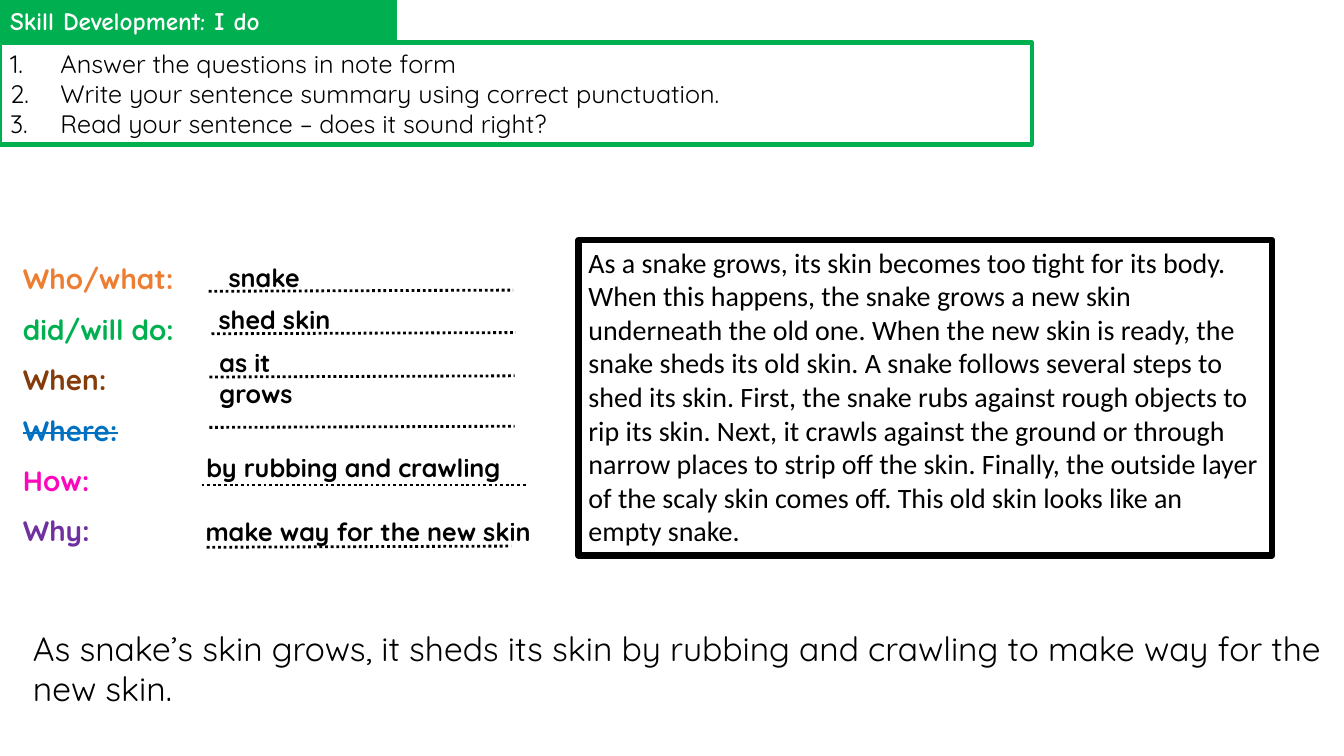
from lxml import etree
from pptx import Presentation
from pptx import util as u
from pptx.dml.color import RGBColor
from pptx.enum import dml, shapes, text
from pptx.oxml.ns import qn

BLACK = RGBColor(0x00, 0x00, 0x00)
WHITE = RGBColor(0xFF, 0xFF, 0xFF)
GREEN = RGBColor(0x00, 0xB0, 0x50)
ORANGE = RGBColor(0xED, 0x7D, 0x31)
BROWN = RGBColor(0x84, 0x3C, 0x0B)
BLUE = RGBColor(0x00, 0x70, 0xC0)
PINK = RGBColor(0xFC, 0x08, 0xBC)
PURPLE = RGBColor(0x70, 0x30, 0xA0)
FONT = "Quicksand"

STEPS = [
    "Answer the questions in note form",
    "Write your sentence summary using correct punctuation.",
    "Read your sentence – does it sound right?",
]
LABELS = [
    ("Who/what:", ORANGE, False),
    ("did/will do:", GREEN, False),
    ("When:", BROWN, False),
    ("Where:", BLUE, True),
    ("How:", PINK, False),
    ("Why:", PURPLE, False),
]
# Text, its left, top and width; rule left, top, width and rise
ANSWERS = [
    ("snake", 0.58, 0.43, 2.39, 0.33, 1.29, 7.67, 0.03),
    ("shed skin", 0.33, 1.49, 3.38, 0.4, 2.36, 7.67, 0.03),
    ("as it grows", 0.35, 2.59, 3.76, 0.35, 3.45, 7.69, 0.03),
    ("", 0, 0, 0, 0.35, 4.72, 7.69, 0.03),
    ("by rubbing and crawling", 0.02, 5.23, 8.13, 0.15, 6.17, 8.18, 0),
    ("make way for the new skin", 0, 6.83, 8.79, 0.28, 7.74, 7.67, 0.03),
]
STORY = (
    "As a snake grows, its skin becomes too tight for its body. When this "
    "happens, the snake grows a new skin underneath the old one. When the new "
    "skin is ready, the snake sheds its old skin. A snake follows several steps "
    "to shed its skin. First, the snake rubs against rough objects to rip its "
    "skin. Next, it crawls against the ground or through narrow places to strip "
    "off the skin. Finally, the outside layer of the scaly skin comes off. This "
    "old skin looks like an empty snake."
)
SUMMARY = (
    "As snake’s skin grows, it sheds its skin by rubbing and crawling "
    "to make way for the new skin."
)


def place(shape, box):
    shape.left, shape.top, shape.width, shape.height = map(u.Cm, box)


def write(para, words, size, color=BLACK, bold=False, font=FONT):
    para.alignment = text.PP_ALIGN.LEFT
    run = para.add_run()
    run.text = words
    run.font.name = font
    run.font.size = u.Pt(size)
    run.font.bold = bold
    run.font.color.rgb = color
    return run


def text_box(slide, box, wrap):
    frame = slide.shapes.add_textbox(*map(u.Cm, box)).text_frame
    frame.word_wrap = wrap
    frame.auto_size = text.MSO_AUTO_SIZE.SHAPE_TO_FIT_TEXT
    return frame


def heading(slide, box):
    title = slide.shapes.title
    place(title, box)
    title.fill.solid()
    title.fill.fore_color.rgb = GREEN
    frame = title.text_frame
    frame.auto_size = text.MSO_AUTO_SIZE.NONE
    frame.vertical_anchor = text.MSO_ANCHOR.MIDDLE
    write(frame.paragraphs[0], "Skill Development: I do", 18, WHITE, True,
          "Comic Neue")


def steps(slide, box):
    body = slide.placeholders[1]
    place(body, box)
    body.fill.solid()
    body.fill.fore_color.rgb = WHITE
    body.line.color.rgb = GREEN
    body.line.width = u.Pt(3)
    frame = body.text_frame
    frame.auto_size = text.MSO_AUTO_SIZE.NONE
    frame.vertical_anchor = text.MSO_ANCHOR.MIDDLE
    for i, step in enumerate(STEPS):
        para = frame.add_paragraph() if i else frame.paragraphs[0]
        props = para._p.get_or_add_pPr()
        indent = u.Cm(1.27)
        props.set("marL", str(indent))
        props.set("indent", str(-indent))
        etree.SubElement(props, qn("a:buFont"), typeface="+mj-lt")
        etree.SubElement(props, qn("a:buAutoNum"), type="arabicPeriod")
        para.line_spacing = 1.0
        para.space_before = u.Pt(0)
        write(para, step, 18)


def labels(slide, box):
    frame = text_box(slide, box, False)
    for i, (label, color, struck) in enumerate(LABELS):
        para = frame.add_paragraph() if i else frame.paragraphs[0]
        para.line_spacing = 1.5
        run = write(para, label, 20, color, True)
        if struck:
            run._r.get_or_add_rPr().set("strike", "sngStrike")


def rule(slide, x, y, width, rise):
    line = slide.shapes.add_connector(
        shapes.MSO_CONNECTOR.STRAIGHT,
        *map(u.Cm, (x, y, x + width, y - rise)))
    line.line.color.rgb = BLACK
    line.line.width = u.Pt(2)
    line.line.dash_style = dml.MSO_LINE.ROUND_DOT
    etree.SubElement(line._element.spPr, qn("a:effectLst"))


def answers(slide, left, top):
    for words, x, y, width, rx, ry, length, rise in ANSWERS:
        rule(slide, left + rx, top + ry, length, rise)
        if words:
            wrap = words == "as it grows"
            frame = text_box(slide, (left + x, top + y, width, 1.02), wrap)
            write(frame.paragraphs[0], words, 18, bold=True)


def story(slide, box):
    panel = slide.shapes.add_shape(shapes.MSO_SHAPE.RECTANGLE,
                                   *map(u.Cm, box))
    panel.shadow.inherit = False
    panel.fill.background()
    panel.line.color.rgb = BLACK
    panel.line.width = u.Pt(4.5)
    frame = panel.text_frame
    frame.word_wrap = True
    frame.vertical_anchor = text.MSO_ANCHOR.TOP
    write(frame.paragraphs[0], STORY, 20, font="Calibri")


def summary(slide, box):
    frame = text_box(slide, box, True)
    write(frame.paragraphs[0], SUMMARY, 24)


def main():
    deck = Presentation()
    deck.slide_width = u.Cm(33.87)
    deck.slide_height = u.Cm(19.05)
    slide = deck.slides.add_slide(deck.slide_layouts[1])
    heading(slide, (0, 0, 10, 1.02))
    steps(slide, (0, 1.07, 26, 2.57))
    labels(slide, (0.33, 6.05, 4.37, 7.95))
    answers(slide, 4.93, 6.05)
    story(slide, (14.58, 6.05, 17.48, 7.95))
    summary(slide, (0.58, 15.7, 33.25, 2.31))
    deck.save("out.pptx")


if __name__ == "__main__":
    main()
